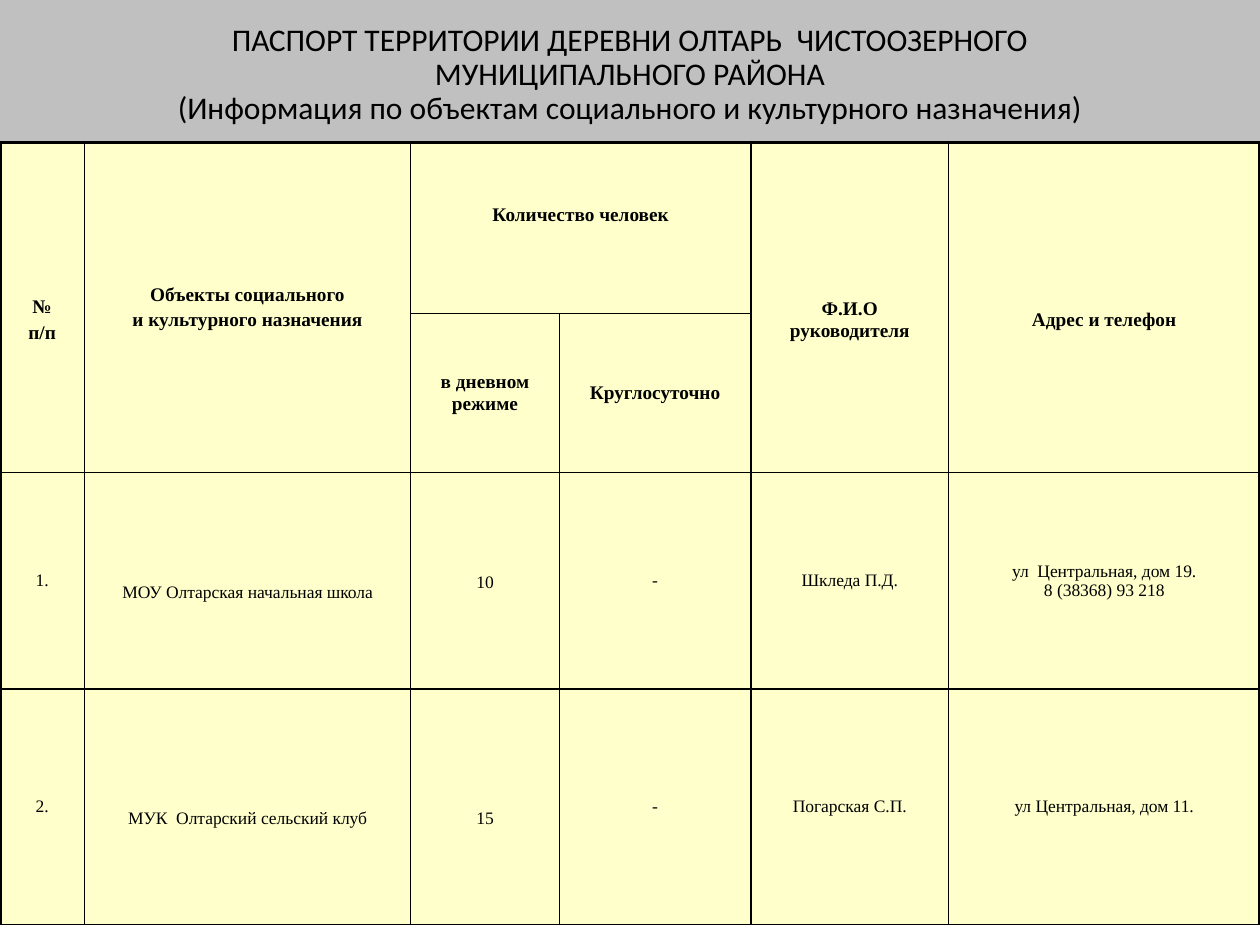
from dataclasses import dataclass

from lxml import etree
from pptx import Presentation
from pptx.dml.color import RGBColor
from pptx.enum import text as t
from pptx.oxml import ns
from pptx.util import Inches, Pt


@dataclass(frozen=True)
class Theme:
    ink: str = "000000"
    banner: str = "C0C0C0"
    cell: str = "FFFFCC"
    title_font: str = "Calibri"
    table_font: str = "Times New Roman"
    title_size: int = 18
    header_size: int = 11
    body_size: int = 10
    thin: float = 1
    thick: float = 2.25


THEME = Theme()
COLUMNS = [0.67, 2.59, 1.18, 1.52, 1.57, 2.47]
ROWS = [1.36, 1.26, 1.72, 1.87]
TITLE_HEIGHT = 1.13
TITLE = [
    "ПАСПОРТ ТЕРРИТОРИИ ДЕРЕВНИ ОЛТАРЬ  ЧИСТООЗЕРНОГО",
    "МУНИЦИПАЛЬНОГО РАЙОНА",
    "(Информация по объектам социального и культурного назначения)",
]
# Row, column, last row, last column, lines, extra space above (below if negative)
HEADERS = [
    (0, 0, 1, 0, ["№", "п/п"], 0.2),
    (0, 1, 1, 1, ["Объекты социального", "и культурного назначения"], 0),
    (0, 2, 0, 3, ["Количество человек"], -0.2),
    (0, 4, 1, 4, ["Ф.И.О руководителя"], 0.2),
    (0, 5, 1, 5, ["Адрес и телефон"], 0.2),
    (1, 2, 1, 2, ["в дневном режиме"], 0),
    (1, 3, 1, 3, ["Круглосуточно"], 0),
]
# Lines and extra space above for each cell
OBJECTS = [
    [(["1."], 0), (["МОУ Олтарская начальная школа"], 0.18), (["10"], 0.03),
     (["-"], 0), (["Шкледа П.Д."], 0),
     (["ул  Центральная, дом 19.", "8 (38368) 93 218"], 0)],
    [(["2."], 0), (["МУК  Олтарский сельский клуб"], 0.18), (["15"], 0.18),
     (["-"], 0), (["Погарская С.П."], 0), (["ул Центральная, дом 11."], 0)],
]


def write(frame, lines, *, font, size, bold=False, before=0, spacing=1.0):
    for index, line in enumerate(lines):
        paragraph = frame.paragraphs[0] if index == 0 else frame.add_paragraph()
        paragraph.alignment = t.PP_ALIGN.CENTER
        paragraph.space_before = Pt(before)
        paragraph.line_spacing = spacing
        run = paragraph.add_run()
        run.text = line
        run.font.name = font
        run.font.size = Pt(size)
        run.font.bold = bold
        run.font.color.rgb = RGBColor.from_string(THEME.ink)


def paint(part, color):
    part.fill.solid()
    part.fill.fore_color.rgb = RGBColor.from_string(color)


def add_borders(cell, row, column):
    widths = {
        "L": THEME.thick if column == 0 else THEME.thin,
        "R": THEME.thick if column == len(COLUMNS) - 1 else THEME.thin,
        "T": THEME.thick if row == 0 else THEME.thin,
        "B": THEME.thin,
    }
    properties = cell._tc.get_or_add_tcPr()
    for side, width in widths.items():
        line = etree.SubElement(properties, ns.qn(f"a:ln{side}"), w=str(Pt(width)))
        fill = etree.SubElement(line, ns.qn("a:solidFill"))
        etree.SubElement(fill, ns.qn("a:srgbClr"), val=THEME.ink)


def fill_cell(cell, lines, shift, *, size, bold=False, before=0):
    cell.vertical_anchor = t.MSO_ANCHOR.MIDDLE
    cell.margin_left = cell.margin_right = Inches(0.1)
    cell.margin_top = Inches(0.05 + max(shift, 0))
    cell.margin_bottom = Inches(0.05 + max(-shift, 0))
    write(cell.text_frame, lines, font=THEME.table_font, size=size,
          bold=bold, before=before)


def add_title(slide):
    title = slide.shapes.title
    title.left = title.top = 0
    title.width, title.height = Inches(10), Inches(TITLE_HEIGHT)
    paint(title, THEME.banner)
    frame = title.text_frame
    frame.word_wrap = True
    frame.auto_size = t.MSO_AUTO_SIZE.NONE
    frame.vertical_anchor = t.MSO_ANCHOR.MIDDLE
    frame.margin_left = frame.margin_right = Inches(0.04)
    frame.margin_top, frame.margin_bottom = Inches(0.08), Inches(0.02)
    write(frame, TITLE, font=THEME.title_font, size=THEME.title_size, spacing=0.9)


def add_objects_table(slide):
    table = slide.shapes.add_table(
        len(ROWS), len(COLUMNS), 0, Inches(TITLE_HEIGHT),
        Inches(sum(COLUMNS)), Inches(sum(ROWS))).table
    table.first_row = table.horz_banding = False
    for column, width in zip(table.columns, COLUMNS):
        column.width = Inches(width)
    for row, height in zip(table.rows, ROWS):
        row.height = Inches(height)
    for row in range(len(ROWS)):
        for column in range(len(COLUMNS)):
            cell = table.cell(row, column)
            add_borders(cell, row, column)
            paint(cell, THEME.cell)

    for row, column, last_row, last_column, lines, shift in HEADERS:
        cell = table.cell(row, column)
        if (row, column) != (last_row, last_column):
            cell.merge(table.cell(last_row, last_column))
        fill_cell(cell, lines, shift, size=THEME.header_size, bold=True,
                  before=0.2 * THEME.header_size)
    for row, entries in enumerate(OBJECTS, start=2):
        for column, (lines, shift) in enumerate(entries):
            is_address = column == len(COLUMNS) - 1
            fill_cell(table.cell(row, column), lines, shift, size=THEME.body_size,
                      before=0 if is_address else 0.2 * THEME.body_size)


def main():
    deck = Presentation()
    deck.slide_width, deck.slide_height = Inches(10), Inches(7.5)
    slide = deck.slides.add_slide(deck.slide_layouts.get_by_name("Title Only"))
    add_title(slide)
    add_objects_table(slide)
    deck.save("out.pptx")


if __name__ == "__main__":
    main()
